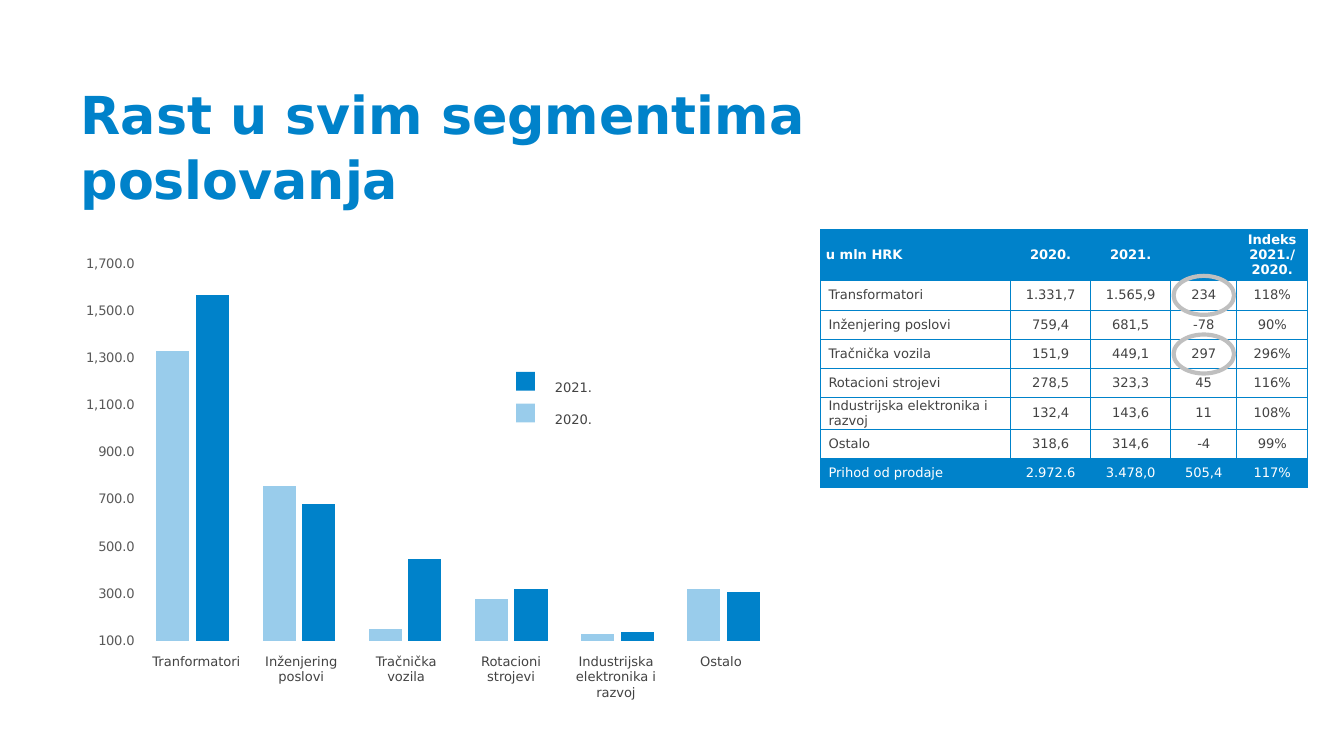
import pptx
import pptx.util
import pptx.chart.data
import pptx.dml.color
import pptx.enum.chart
import pptx.enum.shapes
import pptx.enum.text
import pptx.oxml
import pptx.oxml.ns

Pt = pptx.util.Pt
ALIGN = pptx.enum.text.PP_ALIGN
ANCHOR = pptx.enum.text.MSO_ANCHOR
AUTO = pptx.enum.text.MSO_AUTO_SIZE
SHAPE = pptx.enum.shapes.MSO_SHAPE

# Content
FONT = "DejaVu Sans"
COLORS = {"blue": "0082CA", "light": "99CCEB", "text": "434343",
          "axis": "595959", "ring": "BFBFBF", "white": "FFFFFF"}
TITLE = "Rast u svim segmentima poslovanja"
SERIES = [("2020.", "light", [1330, 760, 150, 280, 130, 320]),
          ("2021.", "blue", [1570, 680, 450, 320, 140, 310])]
# Category label, width, height
LABELS = [("Tranformatori", 63.4, 15.8), ("Inženjering poslovi", 57.6, 24.5),
          ("Tračnička vozila", 57.6, 24.5), ("Rotacioni strojevi", 57.6, 24.5),
          ("Industrijska elektronika i razvoj", 57.6, 32.4), ("Ostalo", 63.4, 15.8)]
ROWS = [
    ["u mln HRK", "2020.", "2021.", "", "Indeks\n2021./\n2020."],
    ["Transformatori", "1.331,7", "1.565,9", "234", "118%"],
    ["Inženjering poslovi", "759,4", "681,5", "-78", "90%"],
    ["Tračnička vozila", "151,9", "449,1", "297", "296%"],
    ["Rotacioni strojevi", "278,5", "323,3", "45", "116%"],
    ["Industrijska elektronika i razvoj", "132,4", "143,6", "11", "108%"],
    ["Ostalo", "318,6", "314,6", "-4", "99%"],
    ["Prihod od prodaje", "2.972.6", "3.478,0", "505,4", "117%"],
]
COL_WIDTHS = [101.8, 42.9, 42.9, 35.4, 38]
HEADER_H, ROW_H = 27.4, 15.7
TABLE_X, TABLE_Y = 439.6, 123
RINGED_ROWS = [1, 3]


def rgb(name):
    return pptx.dml.color.RGBColor.from_string(COLORS[name])


def write(tf, text, size, color, bold=False, align=None, spacing=None):
    """Fill a text frame, one paragraph per line."""
    for i, line in enumerate(text.split("\n")):
        p = tf.add_paragraph() if i else tf.paragraphs[0]
        p.alignment = align
        p.line_spacing = spacing
        r = p.add_run()
        r.text = line
        r.font.name, r.font.size, r.font.bold = FONT, Pt(size), bold
        r.font.color.rgb = rgb(color)


def add_text(shapes, x, y, w, h, text, inset=7.2, **style):
    tf = shapes.add_textbox(Pt(x), Pt(y), Pt(w), Pt(h)).text_frame
    tf.word_wrap = True
    tf.margin_left = tf.margin_right = Pt(inset)
    write(tf, text, 7, "text", **style)


def add_plain(shapes, kind, x, y, w, h, fill=None, line=None):
    sp = shapes.add_shape(kind, Pt(x), Pt(y), Pt(w), Pt(h))
    sp.shadow.inherit = False
    if fill:
        sp.fill.solid()
        sp.fill.fore_color.rgb = rgb(fill)
    else:
        sp.fill.background()
    if line:
        sp.line.color.rgb = rgb(line)
        sp.line.width = Pt(2.25)
    else:
        sp.line.fill.background()


def set_borders(cell, color):
    tc_pr = cell._tc.get_or_add_tcPr()
    for i, side in enumerate("LRTB"):
        tc_pr.insert(i, pptx.oxml.parse_xml(
            f'<a:ln{side} {pptx.oxml.ns.nsdecls("a")} w="6350"><a:solidFill>'
            f'<a:srgbClr val="{COLORS[color]}"/></a:solidFill></a:ln{side}>'))


prs = pptx.Presentation()
prs.slide_width, prs.slide_height = Pt(720), Pt(405)
s = prs.slides.add_slide(prs.slide_layouts[5])

# Title
title = s.shapes.title
title.left, title.top, title.width, title.height = Pt(36), Pt(36), Pt(412.6), Pt(87)
tf = title.text_frame
tf.auto_size, tf.word_wrap, tf.vertical_anchor = AUTO.NONE, True, ANCHOR.TOP
tf.margin_left = tf.margin_right = tf.margin_top = tf.margin_bottom = Pt(7.2)
write(tf, TITLE, 28, "blue", bold=True, align=ALIGN.LEFT, spacing=1.03)

# Column chart
data = pptx.chart.data.CategoryChartData()
data.categories = [str(i + 1) for i in range(len(LABELS))]
for name, _, values in SERIES:
    data.add_series(name, values)
chart = s.shapes.add_chart(pptx.enum.chart.XL_CHART_TYPE.COLUMN_CLUSTERED,
                           Pt(38.2), Pt(133.2), Pt(385.2), Pt(218.2), data).chart
chart.has_legend = chart.has_title = False
chart.font.name, chart.font.size = FONT, Pt(10)
plot = chart.plots[0]
plot.gap_width, plot.overlap, plot.vary_by_categories = 101, -20, False
for series, (_, color, _) in zip(plot.series, SERIES):
    series.format.fill.solid()
    series.format.fill.fore_color.rgb = rgb(color)
chart.category_axis.visible = False
axis = chart.value_axis
axis.minimum_scale, axis.maximum_scale, axis.major_unit = 100, 1700, 200
axis.has_major_gridlines = False
axis.major_tick_mark = pptx.enum.chart.XL_TICK_MARK.NONE
axis.format.line.fill.background()
axis.tick_labels.number_format = "#,##0.0"
axis.tick_labels.number_format_is_linked = False
font = axis.tick_labels.font
font.name, font.size, font.color.rgb = FONT, Pt(7), rgb("axis")

# Fixed inner plot area
area = chart._chartSpace.chart.plotArea
for old in area.findall(pptx.oxml.ns.qn("c:layout")):
    area.remove(old)
area.insert(0, pptx.oxml.parse_xml(
    f'<c:layout {pptx.oxml.ns.nsdecls("c")}><c:manualLayout>'
    '<c:layoutTarget val="inner"/><c:xMode val="edge"/><c:yMode val="edge"/>'
    '<c:x val="0.095"/><c:y val="0.038"/><c:w val="0.886"/><c:h val="0.926"/>'
    '</c:manualLayout></c:layout>'))

# Legend, newest year first
legend = s.shapes.add_group_shape().shapes
years = SERIES[::-1]
add_text(legend, 290.2, 191.5, 115.9, 39.6, "\n".join(y[0] for y in years), spacing=2)
for i, (_, color, _) in enumerate(years):
    add_plain(legend, SHAPE.RECTANGLE, 276.5, 199.2 + 17 * i, 10.1, 10.1, fill=color)

# Table
table = s.shapes.add_table(len(ROWS), len(COL_WIDTHS), Pt(TABLE_X), Pt(TABLE_Y),
                           Pt(sum(COL_WIDTHS)),
                           Pt(HEADER_H + ROW_H * (len(ROWS) - 1))).table
table.first_row = table.horz_banding = False
for col, width in zip(table.columns, COL_WIDTHS):
    col.width = Pt(width)
for r_i, row in enumerate(ROWS):
    header = r_i == 0
    filled = header or r_i == len(ROWS) - 1
    table.rows[r_i].height = Pt(HEADER_H if header else ROW_H)
    for c_i, text in enumerate(row):
        cell = table.cell(r_i, c_i)
        cell.vertical_anchor = ANCHOR.MIDDLE
        cell.margin_top = cell.margin_bottom = cell.margin_right = 0
        cell.margin_left = 0 if c_i else Pt(2.9 if header else 4.3)
        if text:
            write(cell.text_frame, text, 7, "white" if filled else "text", bold=header,
                  align=ALIGN.CENTER if c_i else ALIGN.LEFT)
        if filled:
            cell.fill.solid()
            cell.fill.fore_color.rgb = rgb("blue")
        else:
            cell.fill.background()
        set_borders(cell, "blue")

# Rings around the largest gains
ring_w, ring_h = 32.4, 20.9
ring_x = TABLE_X + sum(COL_WIDTHS[:3]) + (COL_WIDTHS[3] - ring_w) / 2
for row in RINGED_ROWS:
    middle = TABLE_Y + HEADER_H + ROW_H * (row - 0.5)
    add_plain(s.shapes, SHAPE.OVAL, ring_x, middle - ring_h / 2, ring_w, ring_h, line="ring")

# Category labels
for i, (text, w, h) in enumerate(LABELS):
    add_text(s.shapes, 105.2 + 56.2 * i - w / 2, 346.4, w, h, text,
             inset=3.6, align=ALIGN.CENTER)

prs.save("out.pptx")
